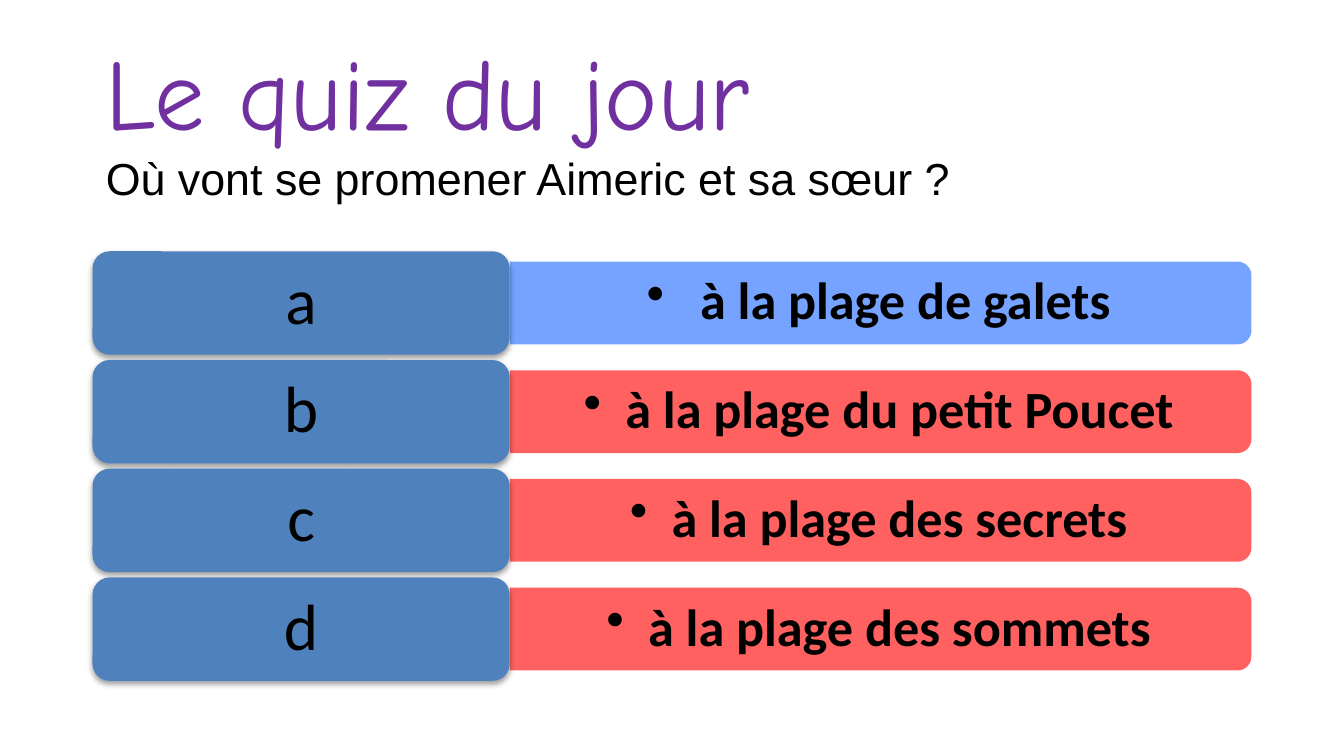
from lxml.etree import SubElement
from pptx import Presentation
from pptx.dml.color import RGBColor
from pptx.enum.shapes import MSO_SHAPE
from pptx.enum.text import MSO_ANCHOR, PP_ALIGN
from pptx.oxml.ns import qn
from pptx.util import Cm, Pt

COLORS = {
    "title": "7030A0",
    "text": "000000",
    "label": "4F81BD",
    "blue": "6699FF",
    "red": "FF5050",
}
ANSWERS = [
    ("a", " à la plage de galets", "blue"),
    ("b", "à la plage du petit Poucet", "red"),
    ("c", "à la plage des secrets", "red"),
    ("d", "à la plage des sommets", "red"),
]
TITLE_FORMAT = {"name": "Comic Neue", "size": Pt(54)}
QUESTION_FORMAT = {"name": "Arial", "size": Pt(24)}
LABEL_FORMAT = {"name": "Calibri", "size": Pt(35)}
ANSWER_FORMAT = {"name": "Calibri", "size": Pt(28), "bold": True}


def add_run(p, text, font_format, color="text"):
    r = p.add_run()
    r.text = text
    for name, value in font_format.items():
        setattr(r.font, name, value)
    r.font.color.rgb = RGBColor.from_string(COLORS[color])


def add_text_box(s, left, top, width, height, inset_x=0.25, inset_y=0.13):
    """Add a wrapped, vertically centred box and return its first paragraph."""
    tf = s.shapes.add_textbox(Cm(left), Cm(top), Cm(width), Cm(height)).text_frame
    frame_format = {
        "word_wrap": True,
        "vertical_anchor": MSO_ANCHOR.MIDDLE,
        "margin_left": Cm(inset_x),
        "margin_right": Cm(inset_x),
        "margin_top": Cm(inset_y),
        "margin_bottom": Cm(inset_y),
    }
    for name, value in frame_format.items():
        setattr(tf, name, value)
    return tf.paragraphs[0]


def add_filled_shape(s, kind, left, top, width, height, color):
    sp = s.shapes.add_shape(kind, Cm(left), Cm(top), Cm(width), Cm(height))
    sp.shadow.inherit = False
    sp.fill.solid()
    sp.fill.fore_color.rgb = RGBColor.from_string(COLORS[color])
    sp.line.fill.background()
    return sp


def add_soft_shadow(sp):
    effects = sp.element.spPr.find(qn("a:effectLst"))
    shadow = SubElement(effects, qn("a:outerShdw"), blurRad=str(Pt(3.1)),
                        dist=str(Pt(1.6)), dir="5400000", rotWithShape="0")
    color = SubElement(shadow, qn("a:srgbClr"), val=COLORS["text"])
    SubElement(color, qn("a:alpha"), val="38000")


def add_bullet(p, indent):
    pPr = p._p.get_or_add_pPr()
    pPr.set("marL", str(Cm(indent)))
    pPr.set("indent", str(-Cm(indent)))
    SubElement(pPr, qn("a:buChar"), char="•")


def add_heading(s, left, top, width, height):
    p = add_text_box(s, left, top, width, height)
    add_run(p, "Le quiz du jour", TITLE_FORMAT, "title")
    p.add_line_break()
    add_run(p, "Où vont se promener Aimeric et sa sœur ?", QUESTION_FORMAT)


def add_answer_bar(s, left, top, width, height, text, color):
    # The shape is laid out upright, then turned so its round corners face right.
    bar = add_filled_shape(s, MSO_SHAPE.ROUND_2_SAME_RECTANGLE,
                           left + (width - height) / 2, top + (height - width) / 2,
                           height, width, color)
    bar.rotation = 90
    fill_color = bar.element.spPr.find(qn("a:solidFill"))[0]
    SubElement(fill_color, qn("a:alpha"), val="90000")

    pad = 0.08
    p = add_text_box(s, left, top + pad, width - pad, height - 2 * pad, 0.3, 0.15)
    p.alignment = PP_ALIGN.CENTER
    p.line_spacing = 0.9
    p.level = 1
    add_bullet(p, 0.79)
    add_run(p, text, ANSWER_FORMAT)


def add_label(s, left, top, width, height, letter):
    box = add_filled_shape(s, MSO_SHAPE.ROUNDED_RECTANGLE,
                           left, top, width, height, "label")
    add_soft_shadow(box)
    pad = 0.1
    p = add_text_box(s, left + pad, top + pad, width - 2 * pad, height - 2 * pad,
                     0.38, 0.18)
    p.alignment = PP_ALIGN.CENTER
    p.line_spacing = 0.9
    add_run(p, letter, LABEL_FORMAT)


def add_answers(s, left, top, width, height):
    label_width = 0.36 * width
    gap = 0.1
    row_height = (height - gap * (len(ANSWERS) - 1)) / len(ANSWERS)
    bar_height = 0.8 * row_height
    for i, (letter, text, color) in enumerate(ANSWERS):
        row_top = top + i * (row_height + gap)
        add_answer_bar(s, left + label_width, row_top + (row_height - bar_height) / 2,
                       width - label_width, bar_height, text, color)
        add_label(s, left, row_top, label_width, row_height, letter)


def main():
    prs = Presentation()
    prs.slide_width, prs.slide_height = Cm(25.4), Cm(14.29)
    s = prs.slides.add_slide(prs.slide_layouts[6])
    add_heading(s, 1.75, 0.5, 21.9, 3.43)
    add_answers(s, 1.75, 4.75, 21.9, 8.12)
    prs.save("out.pptx")


if __name__ == "__main__":
    main()
